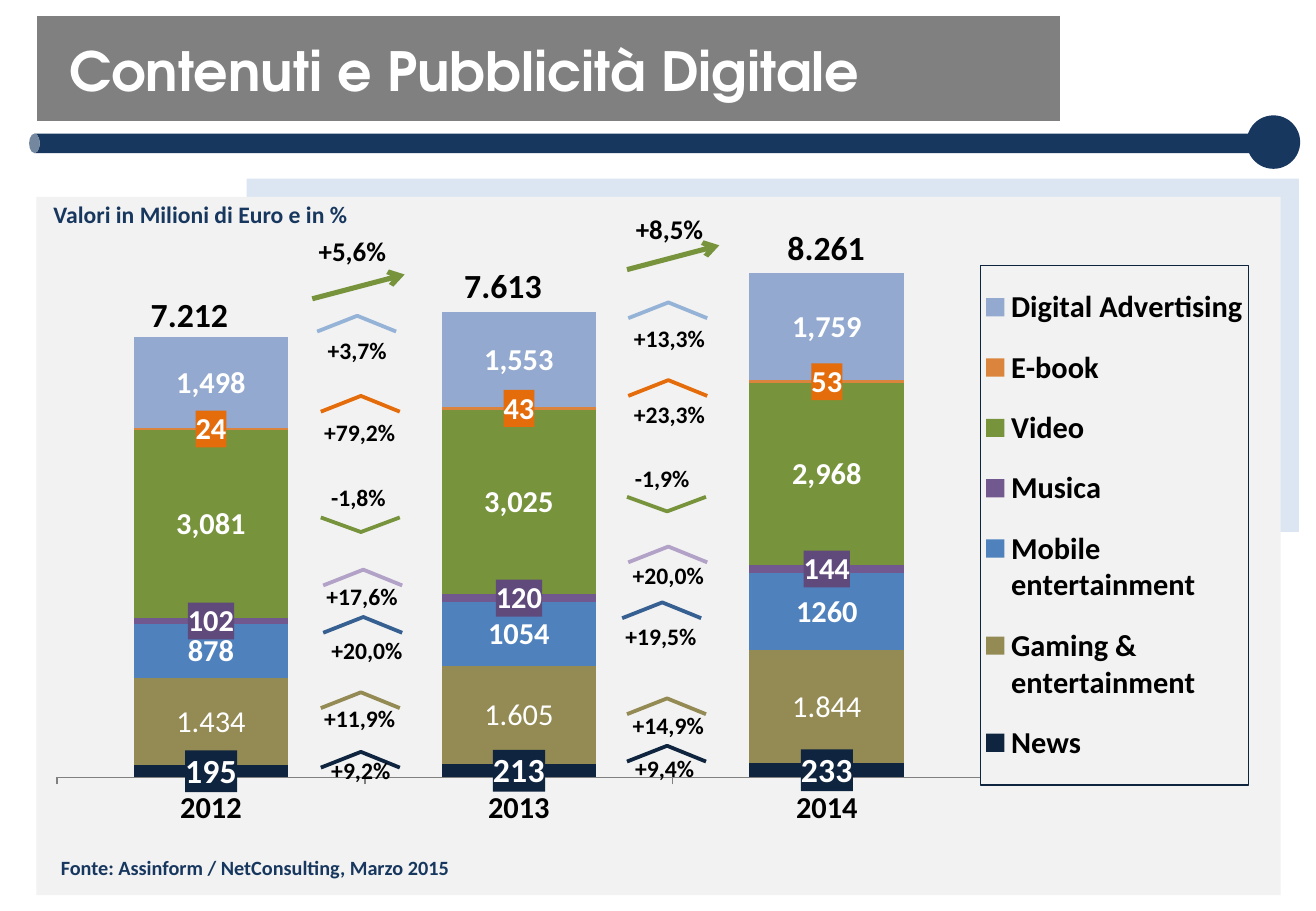
from collections import namedtuple

from lxml import etree
from pptx import Presentation
from pptx.chart.data import CategoryChartData
from pptx.dml.color import RGBColor
from pptx.enum.chart import XL_CHART_TYPE, XL_LEGEND_POSITION, XL_TICK_LABEL_POSITION, XL_TICK_MARK
from pptx.enum.shapes import MSO_CONNECTOR, MSO_SHAPE
from pptx.enum.text import PP_ALIGN
from pptx.oxml import parse_xml
from pptx.oxml.ns import nsdecls, qn
from pptx.util import Pt

PX = 9144
Box = namedtuple("Box", "x y w h")
Series = namedtuple("Series", "name values color label_fill size fmt")
FONT, TITLE_FONT = "Calibri", "TeX Gyre Adventor"
COLORS = {
    "navy": "17375E", "grey": "808080", "white": "FFFFFF", "black": "000000",
    "pale": "DCE6F2", "panel": "F2F2F2", "ink": "0F243E", "olive": "948A54",
    "blue": "4F81BD", "purple": "71588F", "plum": "604A7B", "green": "77933C",
    "amber": "DB843D", "orange": "E46C0A", "steel": "93A9CF", "sky": "95B3D7",
    "lilac": "B3A2C7", "deep": "376092",
}
SERIES = [
    Series("News", (195, 213, 233), "ink", "ink", 20, "General"),
    Series("Gaming & entertainment", (1434, 1605, 1844), "olive", None, 18, "General"),
    Series("Mobile entertainment", (878, 1054, 1260), "blue", None, 18, "General"),
    Series("Musica", (102, 120, 144), "purple", "plum", 18, "General"),
    Series("Video", (3081, 3025, 2968), "green", None, 18, "#,##0"),
    Series("E-book", (24, 43, 53), "amber", "orange", 18, "General"),
    Series("Digital Advertising", (1498, 1553, 1759), "steel", None, 18, "#,##0"),
]
GAMING_LABELS = ("1.434", "1.605", "1.844")
TOTALS = [("7.212", 93, 237, 126), ("7.613", 347, 213, 134), ("8.261", 613, 182, 134)]
GROWTH_COLORS = ("sky", "orange", "green", "lilac", "deep", "olive", "ink")
GROWTH_2013 = [
    ("+3,7%", 31, 90, 1, 102), ("+79,2%", 34, 156, 3, 169),
    ("-1,8%", 34, 256, 2, 223), ("+17,6%", 36, 299, 5, 304),
    ("+20,0%", 36, 338, 9, 349), ("+11,9%", 34, 400, 3, 405),
    ("+9,2%", 34, 449, 4, 447),
]
GROWTH_2014 = [
    ("+13,3%", 37, 79, 8, 92), ("+23,3%", 37, 143, 8, 154),
    ("-1,9%", 36, 239, 2, 207), ("+20,0%", 37, 280, 7, 287),
    ("+19,5%", 32, 326, 1, 337), ("+14,9%", 36, 405, 7, 410),
    ("+9,4%", 36, 444, 4, 446),
]


def px(*lengths):
    """Turn px lengths into EMU."""
    return [n * PX for n in lengths]


def rgb(name):
    """Look up a named colour."""
    return RGBColor.from_string(COLORS[name])


def set_font(font, size, color, bold=True, name=FONT):
    """Apply size, colour, weight and typeface."""
    font.size, font.bold, font.name = Pt(size), bold, name
    font.color.rgb = rgb(color)


def add_block(s, kind, box, fill, line=None):
    """Add a flat filled shape."""
    sp = s.shapes.add_shape(kind, *px(*box))
    sp.shadow.inherit = False
    sp.fill.solid()
    sp.fill.fore_color.rgb = rgb(fill)
    if line:
        sp.line.color.rgb = rgb(line)
        sp.line.width = Pt(0.75)
    else:
        sp.line.fill.background()
    return sp


def add_label(s, box, text, size, color="black", align=PP_ALIGN.CENTER, wrap=True, name=FONT):
    """Add one line of bold text and return its paragraph."""
    tf = s.shapes.add_textbox(*px(*box)).text_frame
    tf.word_wrap = wrap
    p = tf.paragraphs[0]
    p.alignment = align
    r = p.add_run()
    r.text = text
    set_font(r.font, size, color, name=name)
    return p


def add_header(s, box):
    """Draw the rule with its knob, and the title on its band."""
    can = add_block(s, MSO_SHAPE.CAN, Box(box.x + 491, box.y - 400, 16, 1010), "navy")
    can.rotation = 270
    can.adjustments[0] = 0.55
    add_block(s, MSO_SHAPE.RECTANGLE, Box(box.x, box.y, 843, 87), "grey", "white")
    add_block(s, MSO_SHAPE.OVAL, Box(box.x + box.w - 44, box.y + 82, 44, 44), "navy")
    p = add_label(s, Box(box.x + 17, box.y + 23, 1062, 100), "Contenuti e Pubblicità Digitale",
                  32, "white", PP_ALIGN.LEFT, name=TITLE_FONT)
    p.line_spacing = 0.8


def add_panel(s, box):
    """Draw the panel, its backdrop, the unit note and the source line."""
    add_block(s, MSO_SHAPE.RECTANGLE, Box(box.x + 173, box.y - 15, 866, 291), "pale")
    add_block(s, MSO_SHAPE.RECTANGLE, box, "panel")
    add_label(s, Box(box.x + 6, box.y + 537, 348, 30),
              "Fonte: Assinform / NetConsulting, Marzo 2015", 12, "navy", wrap=False)
    add_label(s, Box(box.x + 3, box.y - 2, 264, 34),
              "Valori in Milioni di Euro e in %", 14, "navy", wrap=False)


def manual_layout(x, y, w, h, inner=False):
    """Build a chart layout element from fractions."""
    target = '<c:layoutTarget val="inner"/>' if inner else ""
    return parse_xml(
        f'<c:layout {nsdecls("c")}><c:manualLayout>{target}'
        '<c:xMode val="edge"/><c:yMode val="edge"/>'
        f'<c:x val="{x}"/><c:y val="{y}"/><c:w val="{w}"/><c:h val="{h}"/>'
        '</c:manualLayout></c:layout>')


def add_sp_pr(element, content):
    """Put shape properties ahead of the text properties."""
    element.find(qn("c:txPr")).addprevious(
        parse_xml(f'<c:spPr {nsdecls("c", "a")}>{content}</c:spPr>'))


def solid(name):
    """Give the XML of a solid fill."""
    return f'<a:solidFill><a:srgbClr val="{COLORS[name]}"/></a:solidFill>'


def style_series(series, item):
    """Colour one series and its value labels."""
    series.format.fill.solid()
    series.format.fill.fore_color.rgb = rgb(item.color)
    labels = series.data_labels
    labels.show_value = True
    labels.number_format = item.fmt
    labels.number_format_is_linked = False
    set_font(labels.font, item.size, "white")
    if item.label_fill:
        add_sp_pr(labels._element, solid(item.label_fill))


def add_market_chart(s, box):
    """Draw the stacked columns with legend and totals."""
    data = CategoryChartData()
    data.categories = ["2012", "2013", "2014"]
    for item in SERIES:
        data.add_series(item.name, item.values)
    chart = s.shapes.add_chart(XL_CHART_TYPE.COLUMN_STACKED, *px(*box), data).chart
    chart.has_title = False
    set_font(chart.font, 18, "black", False, "Arial")
    plot = chart.plots[0]
    plot.gap_width, plot.overlap, plot.vary_by_categories = 99, 100, False
    for series, item in zip(plot.series, SERIES):
        style_series(series, item)
    for i, text in enumerate(GAMING_LABELS):
        r = plot.series[1].points[i].data_label.text_frame.paragraphs[0].add_run()
        r.text = text
        set_font(r.font, 18, "white", False)
    value_axis, years = chart.value_axis, chart.category_axis
    value_axis.minimum_scale, value_axis.maximum_scale = 0, 9000
    value_axis.has_major_gridlines = value_axis.visible = False
    years.major_tick_mark = XL_TICK_MARK.OUTSIDE
    years.tick_label_position = XL_TICK_LABEL_POSITION.LOW
    years.format.line.color.rgb = rgb("grey")
    set_font(years.tick_labels.font, 18, "black")
    area = chart._chartSpace.chart.plotArea
    for old in area.findall(qn("c:layout")):
        area.remove(old)
    area.insert(0, manual_layout(0.036, 0.029, 0.722, 0.859, True))
    chart.has_legend = True
    legend = chart.legend
    legend.position = XL_LEGEND_POSITION.RIGHT
    legend.include_in_layout = False
    set_font(legend.font, 18, "black")
    element = legend._element
    for old in element.findall(qn("c:layout")):
        element.remove(old)
    element.find(qn("c:legendPos")).addnext(manual_layout(0.758, 0.088, 0.209, 0.812))
    add_sp_pr(element, f'<a:ln w="9525">{solid("ink")}</a:ln>')
    for text, x, y, w in TOTALS:
        add_label(s, Box(box.x - 9 + x, box.y - 172 + y, w, 44), text, 20)


def add_chevron(s, x, y, color, down):
    """Draw an open chevron pointing up or down."""
    ends, tip = (y, y + 12) if down else (y + 13, y)
    builder = s.shapes.build_freeform(x, ends, scale=PX)
    builder.add_line_segments([(x + 33, tip), (x + 65, ends)], close=False)
    sp = builder.convert_to_shape()
    sp.shadow.inherit = False
    sp.fill.background()
    sp.line.color.rgb = rgb(color)
    sp.line.width = Pt(2.25)


def add_growth(s, box, rows, total, label_at, arrow_at):
    """Draw one column of yearly changes, headed by the total."""
    for color, (text, cx, cy, tx, ty) in zip(GROWTH_COLORS, rows):
        add_chevron(s, box.x + cx, box.y + cy, color, text.startswith("-"))
        add_label(s, Box(box.x + tx, box.y + ty, 126, 34), text, 14)
    add_label(s, Box(box.x + label_at[0], box.y + label_at[1], 126, 37), total, 16)
    x, y = box.x + arrow_at[0], box.y + arrow_at[1]
    arrow = s.shapes.add_connector(MSO_CONNECTOR.STRAIGHT, *px(x, y, x + 76, y - 20))
    arrow.line.color.rgb = rgb("green")
    arrow.line.width = Pt(3)
    etree.SubElement(arrow.line._get_or_add_ln(), qn("a:tailEnd"), type="arrow")
    etree.SubElement(arrow._element.spPr, qn("a:effectLst"))


def main():
    """Build the slide and save it."""
    prs = Presentation()
    prs.slide_width, prs.slide_height = px(1083, 750)
    s = prs.slides.add_slide(prs.slide_layouts[6])
    add_header(s, Box(30, 13, 1040, 126))
    add_panel(s, Box(30, 162, 1024, 575))
    add_market_chart(s, Box(9, 172, 1053, 527))
    add_growth(s, Box(230, 170, 130, 480), GROWTH_2013, "+5,6%", (-3, 18), (27, 76))
    add_growth(s, Box(480, 170, 130, 480), GROWTH_2014, "+8,5%", (8, 0), (36, 52))
    prs.save("out.pptx")


if __name__ == "__main__":
    main()
